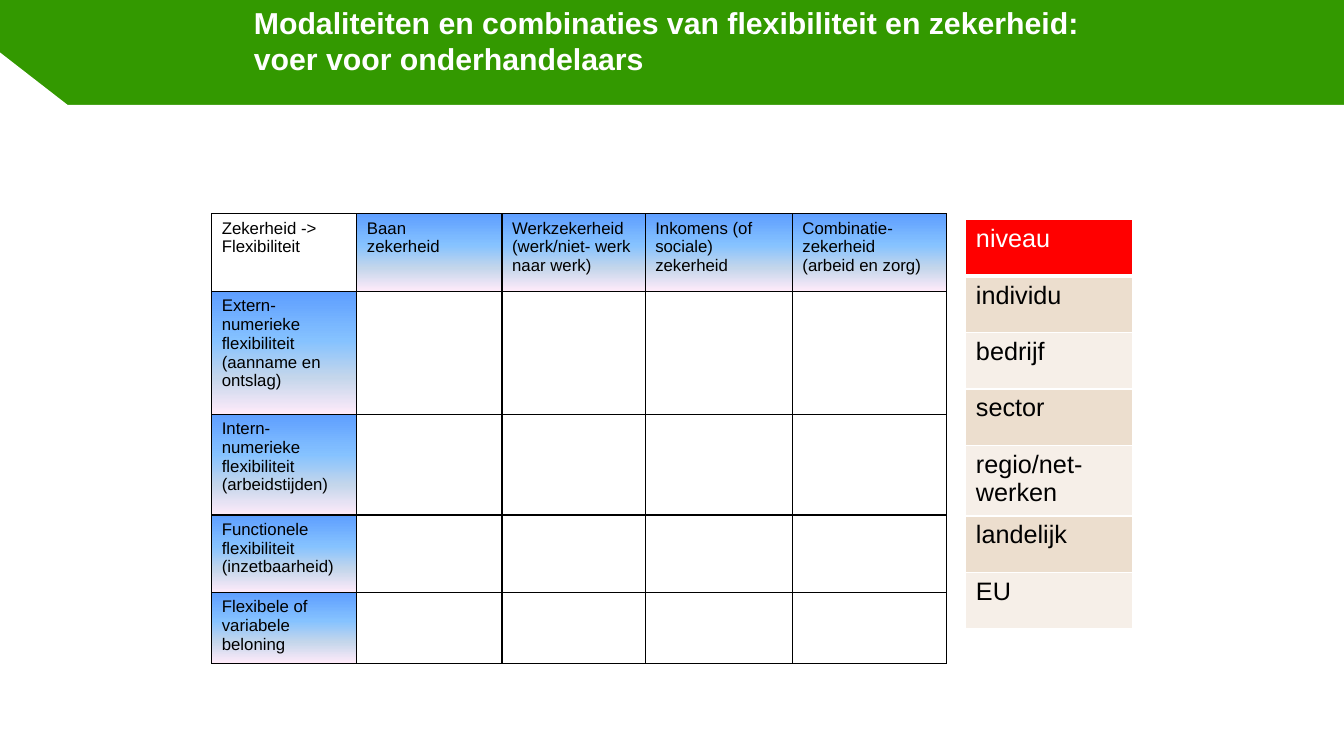
from lxml import etree
from pptx import Presentation
from pptx.dml.color import RGBColor
from pptx.enum.text import MSO_ANCHOR
from pptx.oxml.ns import qn
from pptx.util import Inches, Pt

MIDDLE = MSO_ANCHOR.MIDDLE
GREEN = RGBColor(0x33, 0x99, 0x00)
WHITE = RGBColor(0xFF, 0xFF, 0xFF)
BLACK = RGBColor(0x00, 0x00, 0x00)
RED = RGBColor(0xFF, 0x00, 0x00)
SAND = RGBColor(0xEC, 0xDE, 0xCE)
CREAM = RGBColor(0xF6, 0xEF, 0xE8)
SKY_STOPS = [
    (0, RGBColor(0x5E, 0x9E, 0xFF)),
    (40, RGBColor(0x85, 0xC2, 0xFF)),
    (70, RGBColor(0xC4, 0xD6, 0xEB)),
    (100, RGBColor(0xFF, 0xEB, 0xFA)),
]
WIDTH, HEIGHT = 13.33, 7.5

deck = Presentation()
deck.slide_width, deck.slide_height = Inches(WIDTH), Inches(HEIGHT)
page = deck.slides.add_slide(deck.slide_layouts[6])
page.background.fill.solid()
page.background.fill.fore_color.rgb = GREEN


def add_grid(left, top, columns, rows):
    frame = page.shapes.add_table(
        len(rows), len(columns), Inches(left), Inches(top),
        Inches(sum(columns)), Inches(sum(rows)))
    table = frame.table
    table.first_row = table.horz_banding = False
    for column, width in zip(table.columns, columns):
        column.width = Inches(width)
    for row, height in zip(table.rows, rows):
        row.height = Inches(height)
    return table


def style_cell(cell, text, size, color, border, bottom=1):
    cell.text_frame.text = text
    for para in cell.text_frame.paragraphs:
        para.font.size = Pt(size)
        para.font.name = "Arial"
        para.font.color.rgb = color
    properties = cell._tc.get_or_add_tcPr()
    for side, points in (("L", 1), ("R", 1), ("T", 1), ("B", bottom)):
        line = etree.SubElement(properties, qn("a:ln" + side), w=str(Pt(points)))
        solid = etree.SubElement(line, qn("a:solidFill"))
        etree.SubElement(solid, qn("a:srgbClr"), val=str(border))
    return properties


outline = page.shapes.build_freeform(Inches(0.67), Inches(1.04))
outline.add_line_segments(
    [(Inches(x), Inches(y)) for x, y in
     [(0, 0.52), (0, HEIGHT), (WIDTH, HEIGHT), (WIDTH, 1.04)]])
panel = outline.convert_to_shape()
panel.shadow.inherit = False
panel.fill.solid()
panel.fill.fore_color.rgb = WHITE
panel.line.fill.background()

title = page.shapes.add_textbox(Inches(2.42), 0, Inches(8.5), Inches(0.8))
title.text_frame.word_wrap = True
title.text_frame.vertical_anchor = MIDDLE
title.text_frame.text = ("Modaliteiten en combinaties van flexibiliteit en zekerheid: "
                         "voer voor onderhandelaars")
title_font = title.text_frame.paragraphs[0].runs[0].font
title_font.name = "Arial"
title_font.size = Pt(21.6)
title_font.bold = True
title_font.color.rgb = WHITE

securities = [
    "Zekerheid ->\nFlexibiliteit",
    "Baan\nzekerheid",
    "Werkzekerheid\n(werk/niet- werk\nnaar werk)",
    "Inkomens (of sociale) zekerheid",
    "Combinatie-zekerheid\n(arbeid en zorg)",
]
flexibilities = [
    "Extern-numerieke flexibiliteit\n(aanname en ontslag)",
    "Intern-numerieke\nflexibiliteit\n(arbeidstijden)",
    "Functionele\nflexibiliteit\n(inzetbaarheid)",
    "Flexibele of variabele\nbeloning",
]
matrix_rows = [securities] + [[name] + [""] * 4 for name in flexibilities]
matrix = add_grid(2.1, 2.12, [1.44, 1.44, 1.42, 1.46, 1.53],
                  [0.77, 1.22, 1, 0.77, 0.66])
for r, texts in enumerate(matrix_rows):
    for c, text in enumerate(texts):
        cell = matrix.cell(r, c)
        properties = style_cell(cell, text, 12, BLACK, BLACK)
        if (r == 0) == (c == 0):
            cell.fill.background()
            continue
        gradient = etree.SubElement(properties, qn("a:gradFill"))
        stops = etree.SubElement(gradient, qn("a:gsLst"))
        for percent, color in SKY_STOPS:
            stop = etree.SubElement(stops, qn("a:gs"), pos=str(percent * 1000))
            etree.SubElement(stop, qn("a:srgbClr"), val=str(color))
        etree.SubElement(gradient, qn("a:lin"), ang="5400000", scaled="0")

levels = ["niveau", "individu", "bedrijf", "sector", "regio/net-werken",
          "landelijk", "EU"]
level_table = add_grid(9.58, 2.18, [1.65],
                       [0.66 if "-" in level else 0.56 for level in levels])
for r, level in enumerate(levels):
    cell = level_table.cell(r, 0)
    heading = r == 0
    style_cell(cell, level, 18, WHITE if heading else BLACK, WHITE, 3 if heading else 1)
    cell.fill.solid()
    cell.fill.fore_color.rgb = RED if heading else (CREAM, SAND)[r % 2]

deck.save("out.pptx")
